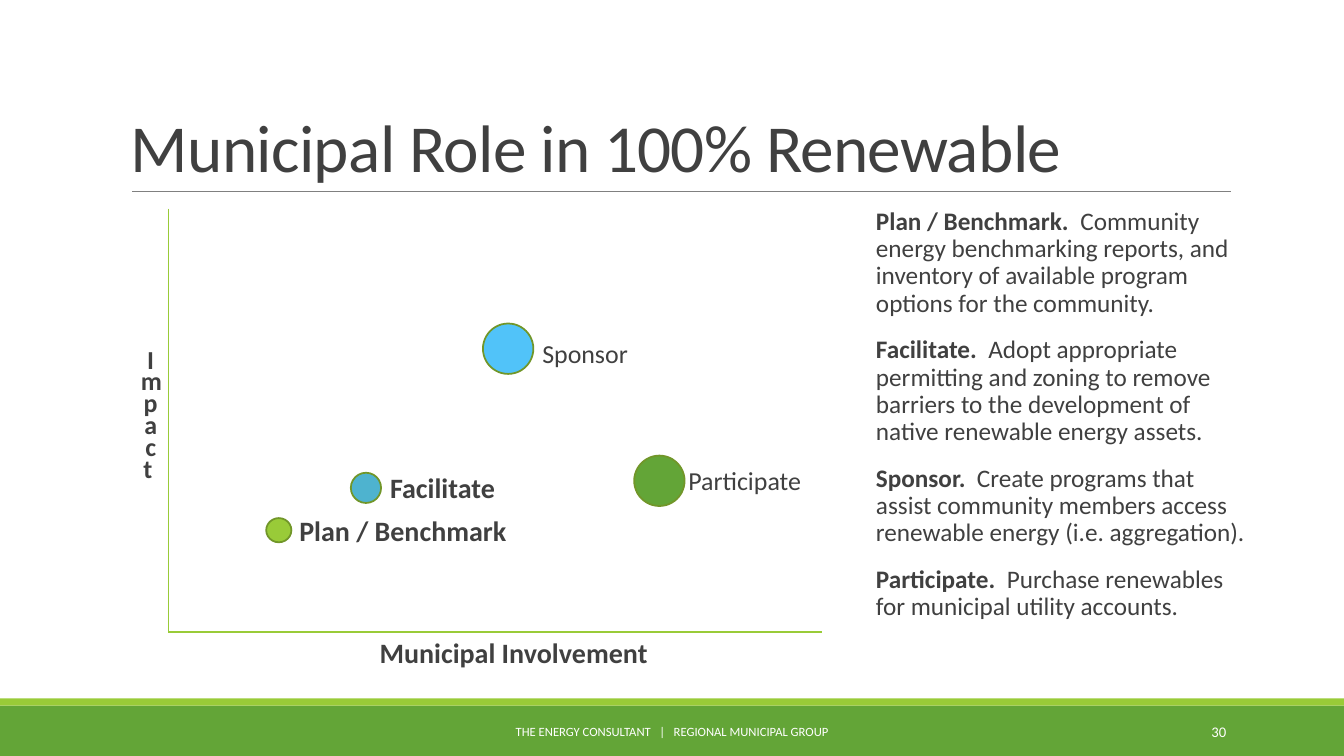
from dataclasses import dataclass

from lxml.etree import SubElement
from pptx import Presentation
from pptx.dml.color import RGBColor
from pptx.enum.shapes import MSO_CONNECTOR as Connector, MSO_SHAPE as Preset
from pptx.enum.text import MSO_ANCHOR as Anchor, PP_ALIGN as Align
from pptx.oxml.ns import qn
from pptx.slide import Slide
from pptx.util import Inches, Pt

DARK = "404040"
WHITE = "FFFFFF"
GREEN = "63A537"
LIME = "99CB38"
OUTLINE = "719629"


@dataclass
class Shape:
    preset: Preset
    left: float
    top: float
    width: float
    height: float
    fill: str
    outline: str = ""


@dataclass
class Line:
    start: tuple[float, float]
    end: tuple[float, float]
    color: str
    weight: float


@dataclass
class Run:
    text: str
    bold: bool = False


@dataclass
class Text:
    left: float
    top: float
    width: float
    height: float
    paragraphs: list[list[Run]]
    size: float
    color: str = DARK
    align: Align = Align.LEFT
    anchor: Anchor = Anchor.TOP
    spacing: float = 0.9
    before: float = 12
    after: float = 2
    right_inset: float = 0
    tracking: int = 0


SHAPES = [
    Shape(Preset.RECTANGLE, 0, 7, 13.33, 0.5, GREEN),
    Shape(Preset.RECTANGLE, 0, 6.93, 13.33, 0.07, LIME),
    Shape(Preset.OVAL, 2.64, 5.14, 0.25, 0.24, LIME, OUTLINE),
    Shape(Preset.OVAL, 6.29, 4.52, 0.5, 0.5, GREEN, OUTLINE),
    Shape(Preset.OVAL, 3.48, 4.69, 0.3, 0.3, "4EB3CF", OUTLINE),
    Shape(Preset.OVAL, 4.79, 3.21, 0.5, 0.5, "51C3F9", OUTLINE),
]

ORIGIN = (1.67, 6.27)
LINES = [
    Line((1.31, 1.9), (12.21, 1.9), "808080", 0.5),
    Line((1.67, 2.07), ORIGIN, LIME, 1),
    Line((8.15, 6.27), ORIGIN, LIME, 1),
]

ROLES = {
    "Plan / Benchmark.  ": "Community energy benchmarking reports, and inventory "
    "of available program options for the community.",
    "Facilitate.  ": "Adopt appropriate permitting and zoning to remove barriers "
    "to the development of native renewable energy assets.",
    "Sponsor.  ": "Create programs that assist community members access "
    "renewable energy (i.e. aggregation).",
    "Participate.  ": "Purchase renewables for municipal utility accounts.",
}

TEXTS = [
    Text(1.2, 0.31, 11, 1.59, [[Run("Municipal Role in 100% Renewable")]], 48,
         anchor=Anchor.BOTTOM, spacing=0.85, before=0, after=0,
         right_inset=0.1, tracking=-50),
    Text(8.59, 2.02, 3.84, 4.92,
         [[Run(role, True), Run(duty)] for role, duty in ROLES.items()], 18),
    Text(4.03, 7.06, 5.27, 0.4,
         [[Run("THE ENERGY CONSULTANT   |   REGIONAL MUNICIPAL GROUP")]], 9, WHITE,
         Align.CENTER, Anchor.MIDDLE, 1, 0, 0, 0.1),
    Text(10.83, 7.06, 1.43, 0.4, [[Run("30")]], 10.5, WHITE,
         Align.RIGHT, Anchor.MIDDLE, 1, 0, 0, 0.1),
    Text(3.48, 6.29, 3.13, 0.38, [[Run("Municipal Involvement", True)]], 20,
         align=Align.CENTER),
    Text(1.3, 3.44, 0.29, 1.46, [[Run("Impact ", True)]], 18.5,
         align=Align.CENTER, spacing=0.7),
    Text(2.87, 5.08, 2.3, 0.46, [[Run("Plan / Benchmark", True)]], 20),
    Text(3.77, 4.66, 2.52, 0.5, [[Run("Facilitate", True)]], 20),
    Text(6.73, 4.62, 1.94, 0.38, [[Run("Participate")]], 18.5, spacing=0.8),
    Text(5.28, 3.36, 1.98, 0.38, [[Run("Sponsor")]], 18.5, spacing=0.8),
]


def rgb(color: str) -> RGBColor:
    return RGBColor.from_string(color)


def set_format(target: object, values: dict[str, object]) -> None:
    for name, value in values.items():
        setattr(target, name, value)


def draw_shape(slide: Slide, item: Shape) -> None:
    box = map(Inches, (item.left, item.top, item.width, item.height))
    shape = slide.shapes.add_shape(item.preset, *box)
    shape.shadow.inherit = False
    shape.fill.solid()
    shape.fill.fore_color.rgb = rgb(item.fill)
    if item.outline:
        shape.line.color.rgb = rgb(item.outline)
        shape.line.width = Pt(1.25)
    else:
        shape.line.fill.background()


def draw_line(slide: Slide, item: Line) -> None:
    ends = map(Inches, (*item.start, *item.end))
    connector = slide.shapes.add_connector(Connector.STRAIGHT, *ends)
    connector.line.color.rgb = rgb(item.color)
    connector.line.width = Pt(item.weight)
    SubElement(connector._element.spPr, qn("a:effectLst"))


def draw_text(slide: Slide, item: Text) -> None:
    box = map(Inches, (item.left, item.top, item.width, item.height))
    frame = slide.shapes.add_textbox(*box).text_frame
    set_format(frame, {
        "word_wrap": True,
        "vertical_anchor": item.anchor,
        "margin_left": Inches(0.1),
        "margin_right": Inches(item.right_inset),
        "margin_top": Inches(0.05),
        "margin_bottom": Inches(0.05),
    })
    for index, runs in enumerate(item.paragraphs):
        paragraph = frame.add_paragraph() if index else frame.paragraphs[0]
        set_format(paragraph, {
            "alignment": item.align,
            "line_spacing": item.spacing,
            "space_before": Pt(item.before),
            "space_after": Pt(item.after),
        })
        for part in runs:
            run = paragraph.add_run()
            run.text = part.text
            set_format(run.font, {
                "name": "Calibri", "size": Pt(item.size), "bold": part.bold,
            })
            run.font.color.rgb = rgb(item.color)
            if item.tracking:
                run._r.get_or_add_rPr().set("spc", str(item.tracking))


def main() -> None:
    presentation = Presentation()
    set_format(presentation, {
        "slide_width": Inches(13.33), "slide_height": Inches(7.5),
    })
    slide = presentation.slides.add_slide(presentation.slide_layouts[6])
    for shape in SHAPES:
        draw_shape(slide, shape)
    for line in LINES:
        draw_line(slide, line)
    for text in TEXTS:
        draw_text(slide, text)
    presentation.save("out.pptx")


if __name__ == "__main__":
    main()
